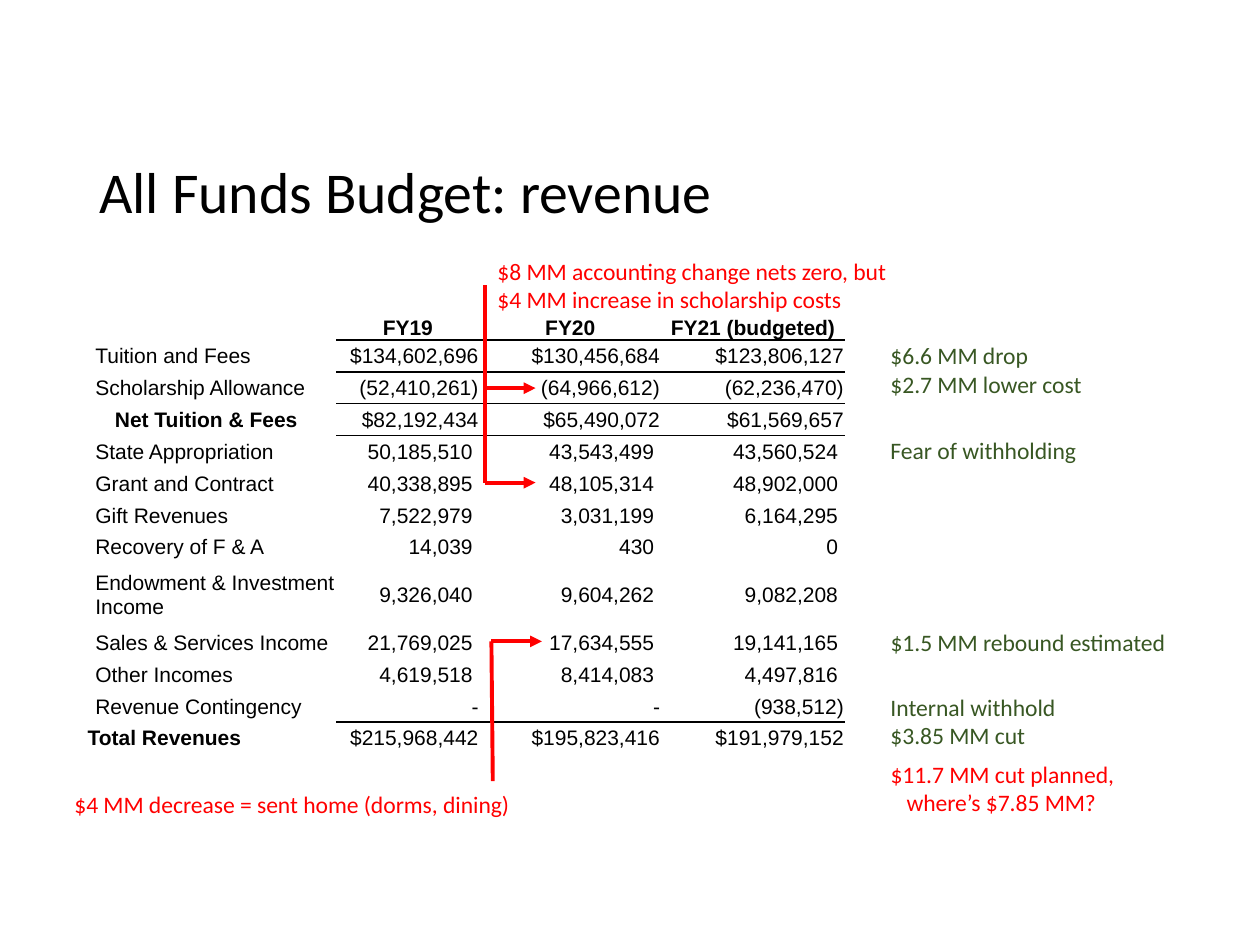
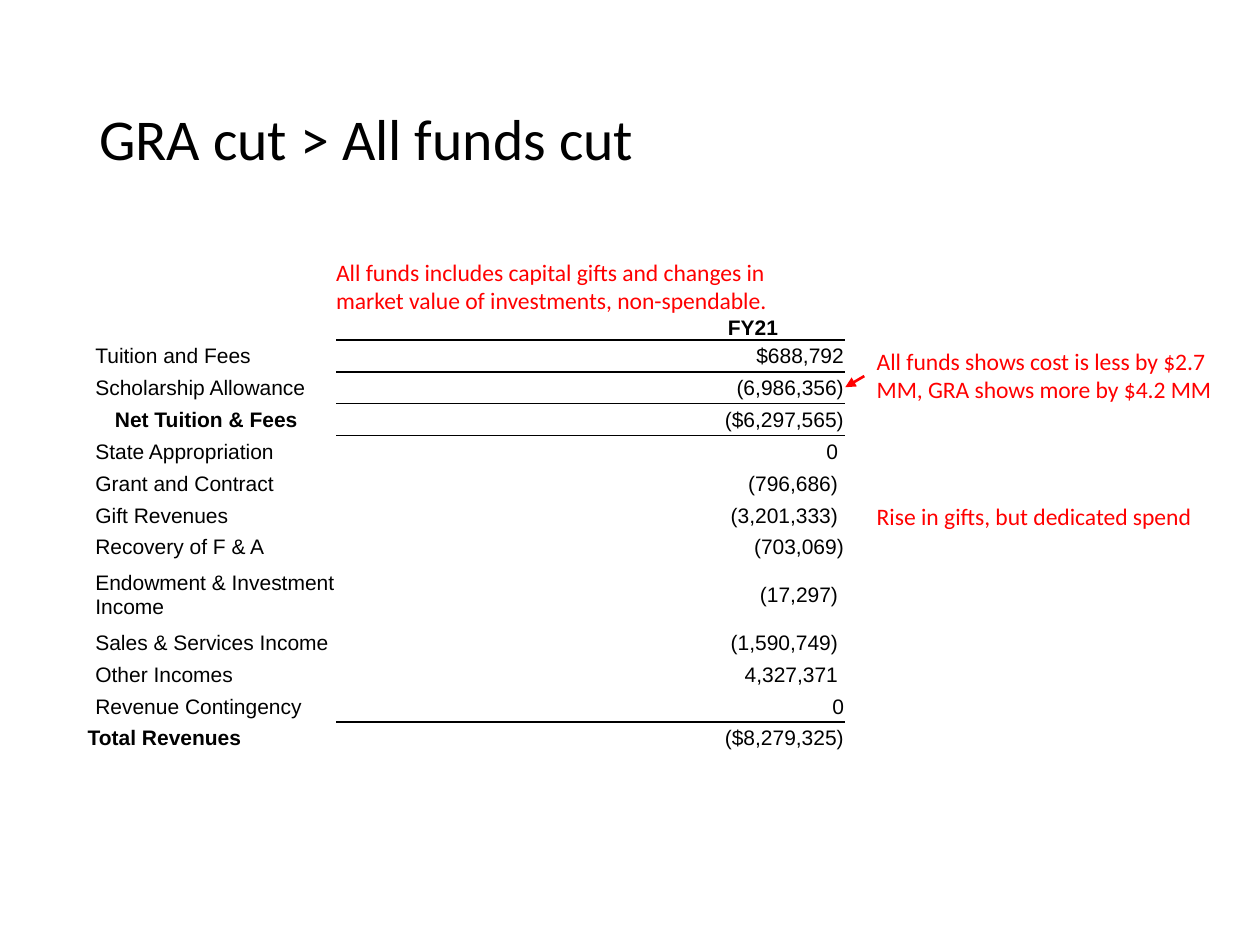
from lxml import etree
from pptx import Presentation
from pptx.dml.color import RGBColor
from pptx.enum.shapes import MSO_CONNECTOR
from pptx.enum.text import MSO_ANCHOR, MSO_AUTO_SIZE, PP_ALIGN
from pptx.oxml.ns import qn
from pptx.util import Pt

STRAIGHT = MSO_CONNECTOR.STRAIGHT
MIDDLE, BOTTOM = MSO_ANCHOR.MIDDLE, MSO_ANCHOR.BOTTOM
FIT_TEXT, NO_FIT = MSO_AUTO_SIZE.SHAPE_TO_FIT_TEXT, MSO_AUTO_SIZE.NONE
LEFT, CENTER, RIGHT = PP_ALIGN.LEFT, PP_ALIGN.CENTER, PP_ALIGN.RIGHT
LEFT_SIDE = 1
TITLE_ONLY = 5
NO_TABLE_STYLE = "{2D5ABB26-0587-4C30-8999-92F81FD0307C}"

COLORS = {"text": "000000", "paper": "FFFFFF", "alert": "FF0000", "comment": "385723"}

MARGIN = 49.5
TITLE_WIDTH = 620.6
TABLE_TOP = 162.7
COLUMN_WIDTHS = [142.6, 82, 103.7, 105.1]
HEADER_HEIGHT, ROW_HEIGHT = 31.6, 18.2
NOTE_LINE, NOTE_PADDING = 16.5, 7.2
COMMENT_LEFT = 501.8
GRA_NOTE_LEFT = 493.9

LABELS = [
    "",
    "Tuition and Fees",
    "Scholarship Allowance",
    "Net Tuition & Fees",
    "State Appropriation",
    "Grant and Contract",
    "Gift Revenues",
    "Recovery of F & A",
    "Endowment & Investment Income",
    "Sales & Services Income",
    "Other Incomes",
    "Revenue Contingency",
    "Total Revenues",
]
SUBTOTAL, ENDOWMENT, TOTAL = 3, 8, 12
RULED_ROWS = (0, 2, 11)
LABEL_INDENTS = {SUBTOTAL: 16.2, TOTAL: 0.6}

FY19 = ["FY19", "$134,602,696", "(52,410,261)", "$82,192,434", "50,185,510 ",
        "40,338,895 ", "7,522,979 ", "14,039 ", "9,326,040 ", "21,769,025 ",
        "4,619,518 ", "-", "$215,968,442"]
FY20 = ["FY20", "$130,456,684", "(64,966,612)", "$65,490,072", "43,543,499 ",
        "48,105,314 ", "3,031,199 ", "430 ", "9,604,262 ", "17,634,555 ",
        "8,414,083 ", "-", "$195,823,416"]
FY21_BUDGET = ["FY21 (budgeted)", "$123,806,127", "(62,236,470)", "$61,569,657",
               "43,560,524 ", "48,902,000 ", "6,164,295 ", "0 ", "9,082,208 ",
               "19,141,165 ", "4,497,816 ", "(938,512)", "$191,979,152"]
FY21_CHANGE = ["FY21", "$688,792", "(6,986,356)", "($6,297,565)", "0 ",
               "(796,686) ", "(3,201,333) ", "(703,069)", "(17,297) ",
               "(1,590,749) ", "4,327,371 ", "0", "($8,279,325)"]
EMPTY_COLUMN = [""] * len(LABELS)


def write(para, text, size=13.5, font="Calibri", color="text", bold=False,
          align=LEFT, spacing=None, indent=0):
    para.alignment = align
    if spacing:
        para.line_spacing = spacing
    if indent:
        para._p.get_or_add_pPr().set("marL", str(Pt(indent)))
    if not text:
        etree.SubElement(para._p, qn("a:endParaRPr"), sz=str(int(size * 100)))
        return
    span = para.add_run()
    span.text = text
    span.font.size = Pt(size)
    span.font.name = font
    span.font.bold = bold
    span.font.color.rgb = RGBColor.from_string(COLORS[color])


def add_page(deck, title, top, height):
    page = deck.slides.add_slide(deck.slide_layouts[TITLE_ONLY])
    box = page.shapes.title
    box.left, box.top, box.width, box.height = map(Pt, (MARGIN, top, TITLE_WIDTH, height))
    box.text_frame.auto_size = NO_FIT
    box.text_frame.vertical_anchor = MIDDLE
    write(box.text_frame.paragraphs[0], title, size=33, spacing=0.9)
    return page


def add_border(cell, side):
    line = etree.SubElement(cell._tc.get_or_add_tcPr(), qn(f"a:{side}"), w=str(Pt(1)))
    fill = etree.SubElement(line, qn("a:solidFill"))
    etree.SubElement(fill, qn("a:srgbClr"), val=COLORS["text"])


def format_cell(cell, text, row, column):
    is_label = column == 0
    if not is_label and row in RULED_ROWS:
        add_border(cell, "lnB")
    if not is_label and row - 1 in RULED_ROWS:
        add_border(cell, "lnT")
    cell.fill.solid()
    cell.fill.fore_color.rgb = RGBColor.from_string(COLORS["paper"])
    cell.margin_left = Pt(LABEL_INDENTS.get(row, 5) if is_label else 0.6)
    cell.margin_top = cell.margin_right = Pt(0.6)
    cell.margin_bottom = 0
    cell.vertical_anchor = MIDDLE if row else BOTTOM
    align = LEFT if is_label else RIGHT if row else CENTER
    bold = row == 0 or (is_label and row in LABEL_INDENTS)
    write(cell.text_frame.paragraphs[0], text, size=12, font="Arial", bold=bold, align=align)


def add_revenue_table(page, *value_columns):
    columns = [LABELS, *value_columns]
    heights = [HEADER_HEIGHT] + [ROW_HEIGHT] * (len(LABELS) - 1)
    heights[ENDOWMENT] *= 2
    table = page.shapes.add_table(
        len(LABELS), len(columns), Pt(MARGIN), Pt(TABLE_TOP),
        Pt(sum(COLUMN_WIDTHS)), Pt(sum(heights))).table
    table.first_row = table.horz_banding = False
    table._tbl.tblPr.find(qn("a:tableStyleId")).text = NO_TABLE_STYLE
    for row, height in enumerate(heights):
        table.rows[row].height = Pt(height)
    for column, (width, texts) in enumerate(zip(COLUMN_WIDTHS, columns)):
        table.columns[column].width = Pt(width)
        for row, text in enumerate(texts):
            format_cell(table.cell(row, column), text, row, column)


def add_note(page, left, top, width, *texts, color="alert", lines=None, last_indent=0):
    height = (lines or len(texts)) * NOTE_LINE + NOTE_PADDING
    box = page.shapes.add_textbox(Pt(left), Pt(top), Pt(width), Pt(height))
    frame = box.text_frame
    frame.word_wrap = lines is not None
    frame.auto_size = FIT_TEXT
    for index, text in enumerate(texts):
        para = frame.add_paragraph() if index else frame.paragraphs[0]
        indent = last_indent if index == len(texts) - 1 else 0
        write(para, text, color=color, indent=indent)
    return box


def add_line(page, start, end, width=2.25, arrow=True, source=None):
    line = page.shapes.add_connector(STRAIGHT, *map(Pt, (*start, *end)))
    line.line.color.rgb = RGBColor.from_string(COLORS["alert"])
    line.line.width = Pt(width)
    if arrow:
        etree.SubElement(line.line._get_or_add_ln(), qn("a:tailEnd"), type="triangle")
    etree.SubElement(line._element.spPr, qn("a:effectLst"))
    if source is not None:
        line.begin_connect(source, LEFT_SIDE)


def build_revenue_page(deck):
    page = add_page(deck, "All Funds Budget: revenue", 72, 78.5)
    add_revenue_table(page, FY19, FY20, FY21_BUDGET)

    stem, scholarship, grant = 277.2, 221.8, 275.8
    accounting = add_note(page, stem, 143, 240.5, "$8 MM accounting change nets zero, but",
                          "$4 MM increase in scholarship costs")
    for level in (scholarship, grant):
        add_line(page, (stem, level), (stem + 28.8, level))
    add_line(page, (stem, TABLE_TOP), (stem, grant), arrow=False, source=accounting)

    sales_stem, sales = 280.8, 366.5
    add_line(page, (sales_stem, sales), (sales_stem + 28.8, sales))
    add_line(page, (sales_stem, sales), (sales_stem + 0.8, 446.4), arrow=False)
    add_note(page, 35.4, 447.8, 267, "$4 MM decrease = sent home (dorms, dining)")

    for top, width, texts in (
        (191.5, 125.3, ["$6.6 MM drop", "$2.7 MM lower cost"]),
        (245.5, 122.4, ["Fear of withholding"]),
        (355.5, 173.5, ["$1.5 MM rebound estimated"]),
        (392.4, 110.2, ["Internal withhold", "$3.85 MM cut"]),
    ):
        add_note(page, COMMENT_LEFT, top, width, *texts, color="comment")
    add_note(page, COMMENT_LEFT, 430.6, 147.6, "$11.7 MM cut planned,",
             "where’s $7.85 MM?", last_indent=9.15)


def build_gra_page(deck):
    page = add_page(deck, "GRA cut > All funds cut", 28.8, 104.4)
    add_revenue_table(page, EMPTY_COLUMN, EMPTY_COLUMN, FY21_CHANGE)
    add_note(page, 185, 143.8, 298, "All funds includes capital gifts and changes in "
             "market value of investments, non-spendable.", lines=2)
    scholarship = add_note(page, GRA_NOTE_LEFT, 194.8, 229, "All funds shows cost is less by "
                           "$2.7 MM, GRA shows more by $4.2 MM", lines=2)
    add_line(page, (GRA_NOTE_LEFT, 214), (483, 221.3), width=1.5, source=scholarship)
    add_note(page, GRA_NOTE_LEFT, 283.2, 229, "Rise in gifts, but dedicated spend", lines=1)


def main():
    deck = Presentation()
    deck.slide_width, deck.slide_height = Pt(720), Pt(540)
    build_revenue_page(deck)
    build_gra_page(deck)
    deck.save("out.pptx")


if __name__ == "__main__":
    main()
